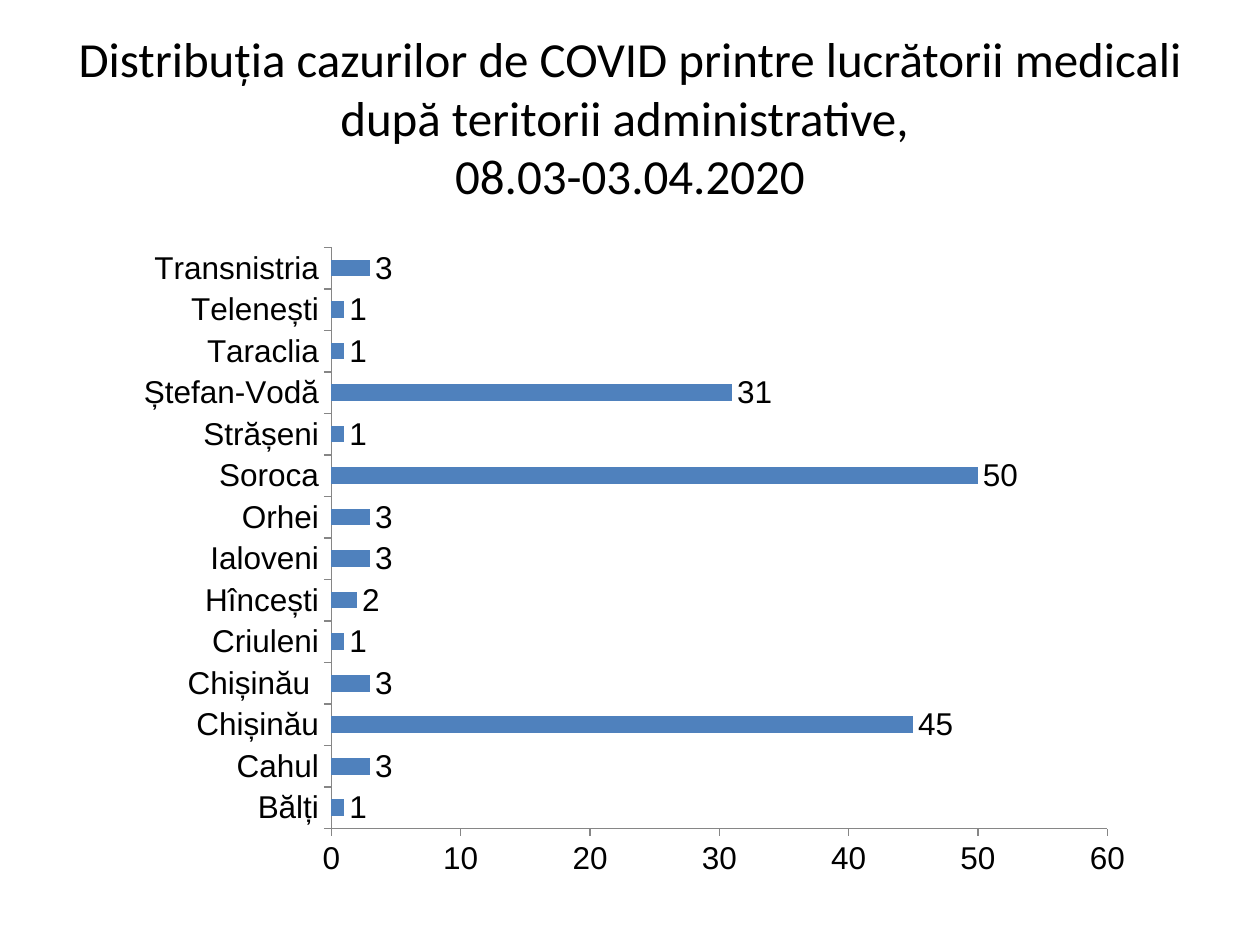
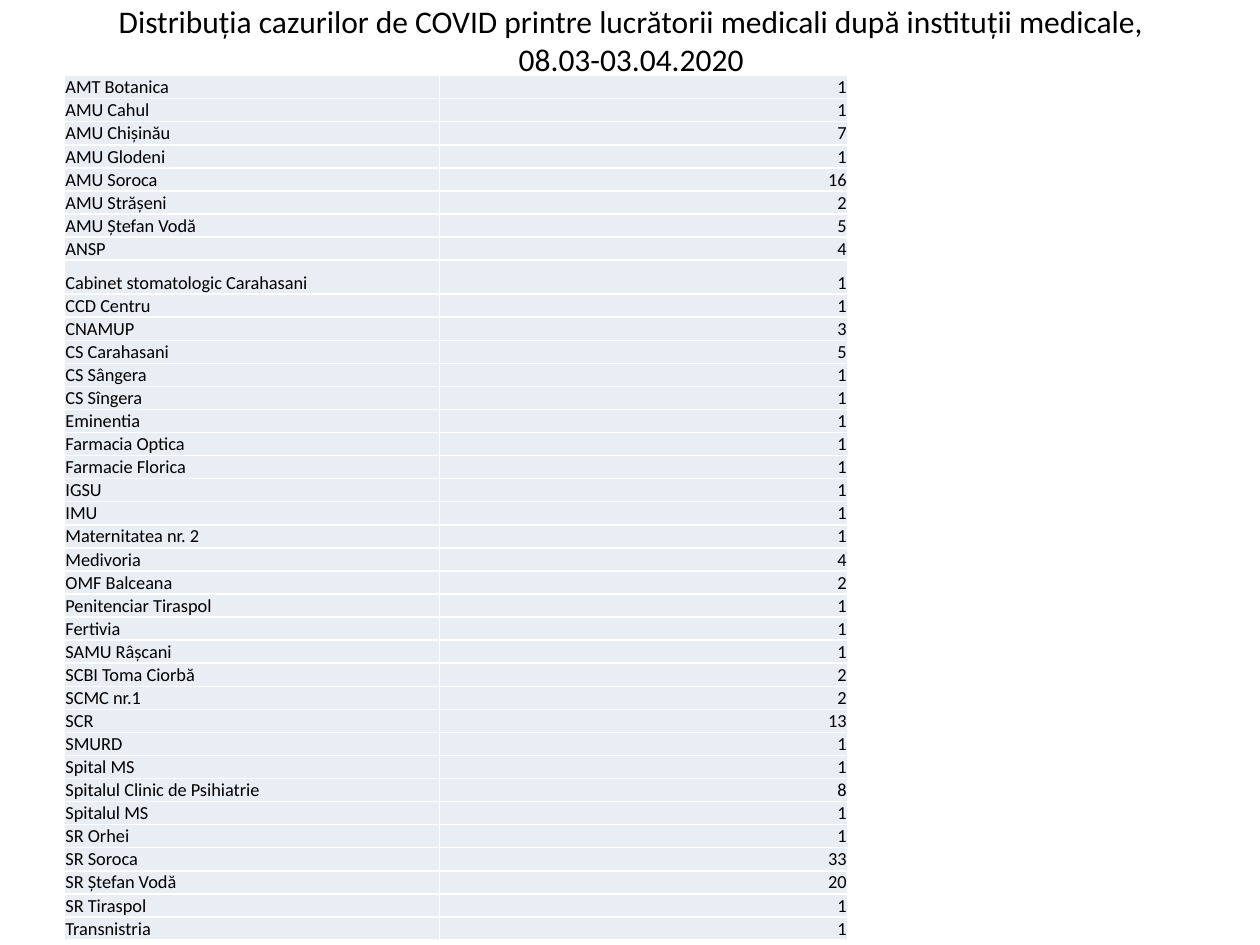
from lxml.etree import SubElement
from pptx import Presentation
from pptx.chart.data import CategoryChartData
from pptx.dml.color import RGBColor
from pptx.enum.chart import XL_CHART_TYPE as ChartType
from pptx.enum.chart import XL_LABEL_POSITION as LabelPosition
from pptx.enum.chart import XL_TICK_MARK as TickMark
from pptx.enum.text import MSO_ANCHOR as Anchor
from pptx.enum.text import MSO_AUTO_SIZE as AutoSize
from pptx.enum.text import PP_ALIGN as Align
from pptx.oxml.ns import qn
from pptx.util import Inches, Pt

COLORS = {"text": "000000", "bar": "4F81BD", "axis": "868686",
          "cell": "E9EDF4", "border": "FFFFFF"}
TITLE_FONT, CHART_FONT = "Calibri", "Arial"


def format_font(font, name, size):
    font.name = name
    font.size = Pt(size)
    font.bold = False
    font.color.rgb = RGBColor.from_string(COLORS["text"])


def add_titled_slide(text, left, top, width, height, size):
    slide = presentation.slides.add_slide(presentation.slide_layouts[5])
    title = slide.shapes.title
    title.left, title.top = Inches(left), Inches(top)
    title.width, title.height = Inches(width), Inches(height)
    frame = title.text_frame
    frame.text = text
    frame.auto_size = AutoSize.NONE
    frame.vertical_anchor = Anchor.MIDDLE
    frame.paragraphs[0].alignment = Align.CENTER
    for run in frame.paragraphs[0].runs:
        format_font(run.font, TITLE_FONT, size)
    return slide


presentation = Presentation()
presentation.slide_width = Inches(10)
presentation.slide_height = Inches(7.5)

# Slide 1: cases by territory
slide = add_titled_slide(
    "Distribuția cazurilor de COVID printre lucrătorii medicali "
    "după teritorii administrative, \v08.03-03.04.2020",
    0.5, 0.3, 9, 1.25, 28)

territories = [
    ("Bălți", 1), ("Cahul", 3), ("Chișinău", 45), ("Chișinău ", 3),
    ("Criuleni", 1), ("Hîncești", 2), ("Ialoveni", 3), ("Orhei", 3),
    ("Soroca", 50), ("Strășeni", 1), ("Ștefan-Vodă", 31), ("Taraclia", 1),
    ("Telenești", 1), ("Transnistria", 3),
]
chart_data = CategoryChartData()
chart_data.categories = [name for name, cases in territories]
chart_data.add_series("Series 1", [cases for name, cases in territories])
chart = slide.shapes.add_chart(
    ChartType.BAR_CLUSTERED, Inches(0.98), Inches(1.86),
    Inches(8.11), Inches(5.2), chart_data).chart
chart.has_legend = False
chart.has_title = False
format_font(chart.font, CHART_FONT, 18)

# Bars and value labels
plot = chart.plots[0]
plot.gap_width = 150
plot.vary_by_categories = False
bar_fill = plot.series[0].format.fill
bar_fill.solid()
bar_fill.fore_color.rgb = RGBColor.from_string(COLORS["bar"])
plot.has_data_labels = True
plot.data_labels.show_value = True
plot.data_labels.position = LabelPosition.OUTSIDE_END
format_font(plot.data_labels.font, CHART_FONT, 18)

# Axes
for axis in (chart.category_axis, chart.value_axis):
    axis.has_major_gridlines = False
    axis.major_tick_mark = TickMark.OUTSIDE
    axis.minor_tick_mark = TickMark.NONE
    axis.format.line.color.rgb = RGBColor.from_string(COLORS["axis"])
    axis.format.line.width = Pt(0.75)
    format_font(axis.tick_labels.font, CHART_FONT, 18)
chart.value_axis.minimum_scale = 0
chart.value_axis.maximum_scale = 60
chart.value_axis.major_unit = 10

# Slide 2: cases by institution
slide = add_titled_slide(
    "Distribuția cazurilor de COVID printre lucrătorii medicali "
    "după instituții medicale, 08.03-03.04.2020",
    0.51, -0.19, 9, 1.01, 18)

institutions = [
    ("AMT Botanica", 1), ("AMU Cahul", 1), ("AMU Chișinău", 7),
    ("AMU Glodeni", 1), ("AMU Soroca", 16), ("AMU Strășeni", 2),
    ("AMU Ștefan Vodă", 5), ("ANSP", 4),
    ("Cabinet stomatologic Carahasani", 1), ("CCD Centru", 1),
    ("CNAMUP", 3), ("CS Carahasani", 5), ("CS Sângera", 1),
    ("CS Sîngera", 1), ("Eminentia", 1), ("Farmacia Optica", 1),
    ("Farmacie Florica", 1), ("IGSU", 1), ("IMU", 1),
    ("Maternitatea nr. 2", 1), ("Medivoria", 4), ("OMF Balceana", 2),
    ("Penitenciar Tiraspol", 1), ("Fertivia", 1), ("SAMU Râșcani", 1),
    ("SCBI Toma Ciorbă", 2), ("SCMC nr.1", 2), ("SCR", 13), ("SMURD", 1),
    ("Spital MS", 1), ("Spitalul Clinic de Psihiatrie", 8),
    ("Spitalul MS", 1), ("SR Orhei", 1), ("SR Soroca", 33),
    ("SR Ștefan Vodă", 20), ("SR Tiraspol", 1), ("Transnistria", 1),
]
TALL_ROW = "Cabinet stomatologic Carahasani"
table = slide.shapes.add_table(
    len(institutions), 2, Inches(0.51), Inches(0.6),
    Inches(6.22), Inches(6.79)).table
table.first_row = False
table.horz_banding = False
table.columns[0].width = Inches(2.98)
table.columns[1].width = Inches(3.24)

for row, (institution, cases) in zip(table.rows, institutions):
    row.height = Inches(0.27 if institution == TALL_ROW else 0.17)
    for cell, text, alignment in zip(
            row.cells, (institution, str(cases)), (Align.LEFT, Align.RIGHT)):
        cell.margin_left = cell.margin_right = Inches(0.01)
        # A thin top margin keeps all rows on the slide
        cell.margin_top = Pt(0.45)
        cell.margin_bottom = 0
        cell.vertical_anchor = Anchor.BOTTOM
        paragraph = cell.text_frame.paragraphs[0]
        paragraph.text = text
        paragraph.alignment = alignment
        format_font(paragraph.runs[0].font, TITLE_FONT, 10.5)
        # Borders come before the fill in the cell properties
        properties = cell._tc.get_or_add_tcPr()
        for side in ("a:lnL", "a:lnR", "a:lnT", "a:lnB"):
            line = SubElement(properties, qn(side), w=str(Pt(1)))
            line_fill = SubElement(line, qn("a:solidFill"))
            SubElement(line_fill, qn("a:srgbClr"), val=COLORS["border"])
        cell.fill.solid()
        cell.fill.fore_color.rgb = RGBColor.from_string(COLORS["cell"])

presentation.save("out.pptx")
